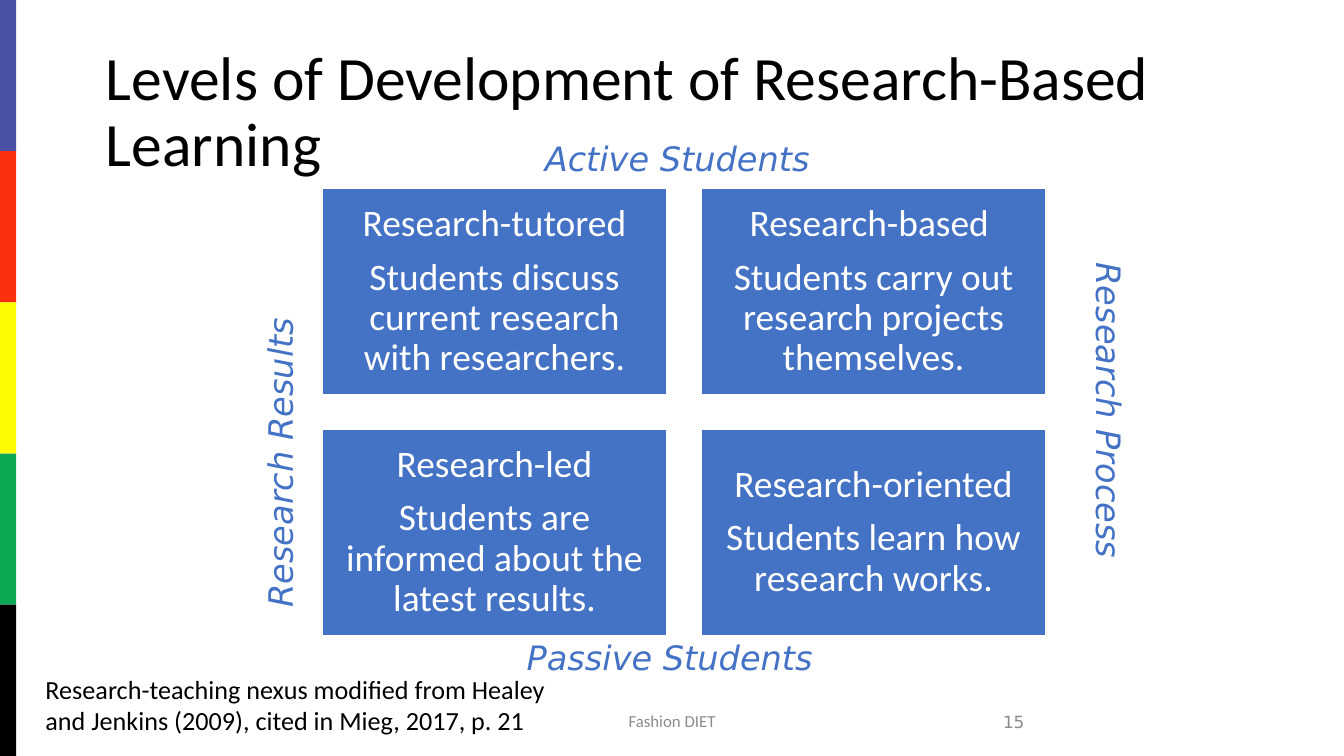
"""Build the slide on levels of development of research-based learning."""
from dataclasses import dataclass

from pptx import Presentation
from pptx.dml.color import RGBColor
from pptx.enum.shapes import MSO_SHAPE
from pptx.enum.text import MSO_ANCHOR, PP_ALIGN
from pptx.util import Inches, Pt


@dataclass(frozen=True)
class Theme:
    body_font: str = "Calibri"
    label_font: str = "DejaVu Sans"
    black: str = "000000"
    white: str = "FFFFFF"
    blue: str = "4472C4"
    footer_gray: str = "8C8C8C"
    number_gray: str = "898989"
    stripes: tuple = ("4952A4", "FC300D", "FFFB00", "0BAA54", "000000")
    title_size: int = 33
    card_size: int = 20
    label_size: int = 18
    source_size: int = 14
    footer_size: int = 9


THEME = Theme()
SLIDE_WIDTH = 10
SLIDE_HEIGHT = SLIDE_WIDTH * 9 / 16
STRIPE_WIDTH = 0.12
GRID_LEFT, GRID_TOP = 2.4, 1.4
CARD_WIDTH, CARD_HEIGHT = 2.56, 1.54
COLUMN_GAP, ROW_GAP = 0.26, 0.25
CARD_INSET = 0.08

TITLE = "Levels of Development of Research-Based Learning"
SOURCE = "Research-teaching nexus modified from Healey and Jenkins (2009), cited in Mieg, 2017, p. 21"
FOOTER = "Fashion DIET"
SLIDE_NUMBER = "15"
CARD_ROWS = [
    [
        ("Research-tutored", "Students discuss current research with researchers."),
        ("Research-based ", "Students carry out research projects themselves."),
    ],
    [
        ("Research-led", "Students are informed about the latest results."),
        ("Research-oriented", "Students learn how research works."),
    ],
]
AXIS_LABELS = [
    ("Research Results", (0.58, 2.92, 3, 0.4), 270, PP_ALIGN.LEFT),
    ("Research Process", (6.95, 2.96, 2.61, 0.4), 90, PP_ALIGN.LEFT),
    ("Active Students", (3.82, 0.98, 2.44, 0.4), 0, PP_ALIGN.CENTER),
    ("Passive Students", (3.82, 4.69, 2.61, 0.4), 0, PP_ALIGN.LEFT),
]


def style(paragraph, size, color, font=THEME.body_font, align=PP_ALIGN.LEFT):
    paragraph.alignment = align
    paragraph.font.name = font
    paragraph.font.size = Pt(size)
    paragraph.font.color.rgb = RGBColor.from_string(color)


def add_rectangle(slide, box, color):
    shape = slide.shapes.add_shape(MSO_SHAPE.RECTANGLE, *map(Inches, box))
    shape.shadow.inherit = False
    shape.fill.solid()
    shape.fill.fore_color.rgb = RGBColor.from_string(color)
    shape.line.fill.background()
    return shape


def add_text(slide, text, box, size, color, anchor=MSO_ANCHOR.TOP, **options):
    shape = slide.shapes.add_textbox(*map(Inches, box))
    frame = shape.text_frame
    frame.word_wrap = True
    frame.vertical_anchor = anchor
    frame.text = text
    style(frame.paragraphs[0], size, color, **options)
    return shape


def add_stripes(slide):
    height = SLIDE_HEIGHT / len(THEME.stripes)
    for index, color in enumerate(THEME.stripes):
        add_rectangle(slide, (0, index * height, STRIPE_WIDTH, height), color)


def add_card(slide, row, column, texts):
    left = GRID_LEFT + column * (CARD_WIDTH + COLUMN_GAP)
    top = GRID_TOP + row * (CARD_HEIGHT + ROW_GAP)
    shape = add_rectangle(slide, (left, top, CARD_WIDTH, CARD_HEIGHT), THEME.blue)
    shape.line.color.rgb = RGBColor.from_string(THEME.white)
    shape.line.width = Pt(1)
    frame = shape.text_frame
    frame.word_wrap = True
    frame.vertical_anchor = MSO_ANCHOR.MIDDLE
    frame.margin_left = frame.margin_right = Inches(CARD_INSET)
    frame.margin_top = frame.margin_bottom = Inches(CARD_INSET)
    frame.text = "\n".join(texts)
    for paragraph in frame.paragraphs:
        style(paragraph, THEME.card_size, THEME.white, align=PP_ALIGN.CENTER)
        paragraph.line_spacing = 0.9
    frame.paragraphs[0].space_after = Pt(7)


def main():
    presentation = Presentation()
    presentation.slide_width = Inches(SLIDE_WIDTH)
    presentation.slide_height = Inches(SLIDE_HEIGHT)
    slide = presentation.slides.add_slide(presentation.slide_layouts[6])

    add_stripes(slide)
    title = add_text(slide, TITLE, (0.69, 0.3, 8.62, 1.09), THEME.title_size,
                     THEME.black, MSO_ANCHOR.MIDDLE)
    title.text_frame.paragraphs[0].line_spacing = 0.9
    add_text(slide, FOOTER, (3.31, 5.21, 3.38, 0.3), THEME.footer_size,
             THEME.footer_gray, MSO_ANCHOR.MIDDLE, align=PP_ALIGN.CENTER)
    add_text(slide, SLIDE_NUMBER, (5.47, 5.22, 2.25, 0.3), THEME.footer_size,
             THEME.number_gray, MSO_ANCHOR.MIDDLE, font=THEME.label_font,
             align=PP_ALIGN.RIGHT)
    add_text(slide, SOURCE, (0.24, 4.96, 4.2, 0.57), THEME.source_size, THEME.black)

    for row, cards in enumerate(CARD_ROWS):
        for column, texts in enumerate(cards):
            add_card(slide, row, column, texts)

    for text, box, rotation, align in AXIS_LABELS:
        label = add_text(slide, text, box, THEME.label_size, THEME.blue,
                         font=THEME.label_font, align=align)
        label.rotation = rotation
        label.text_frame.paragraphs[0].font.italic = True

    presentation.save("out.pptx")


if __name__ == "__main__":
    main()
